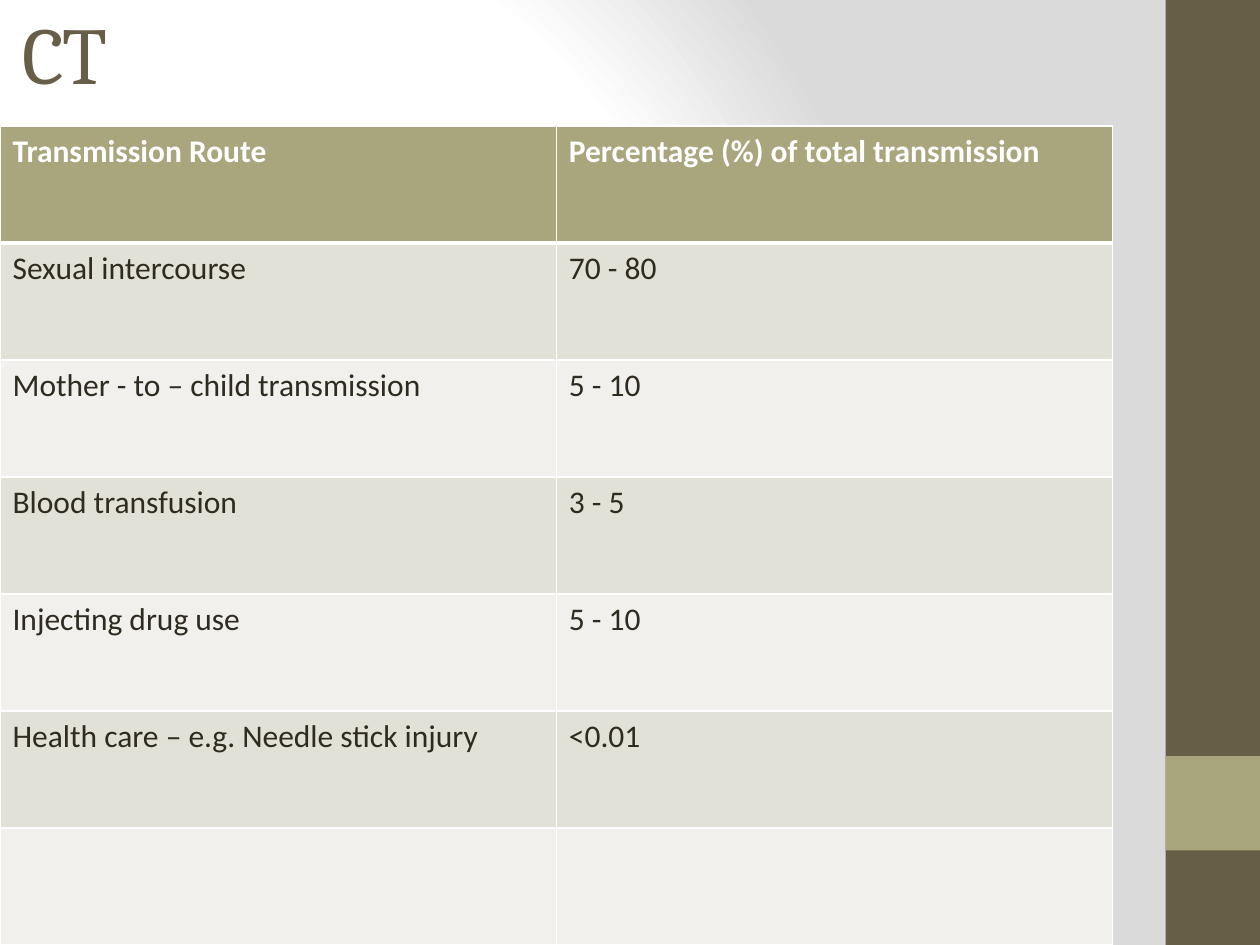
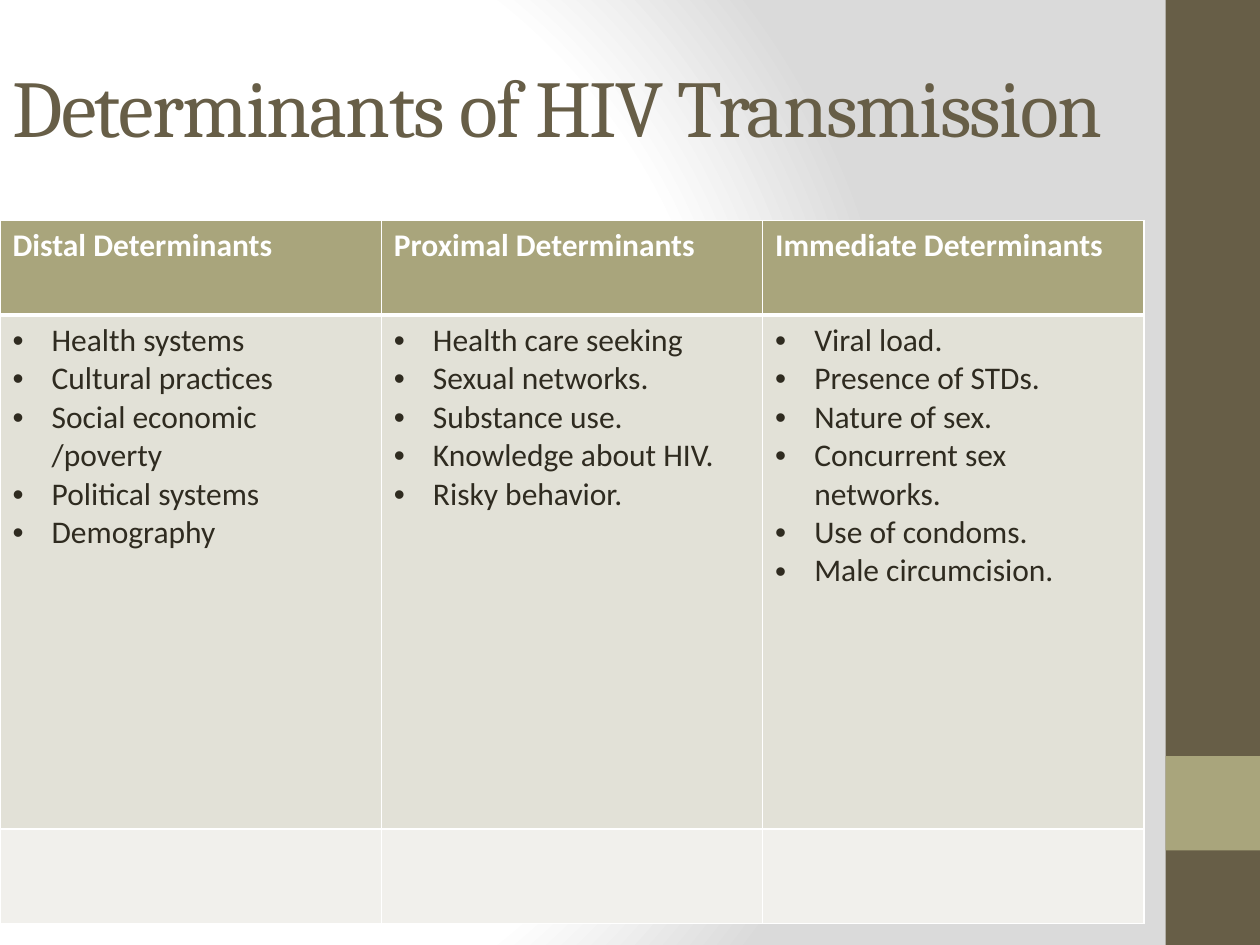
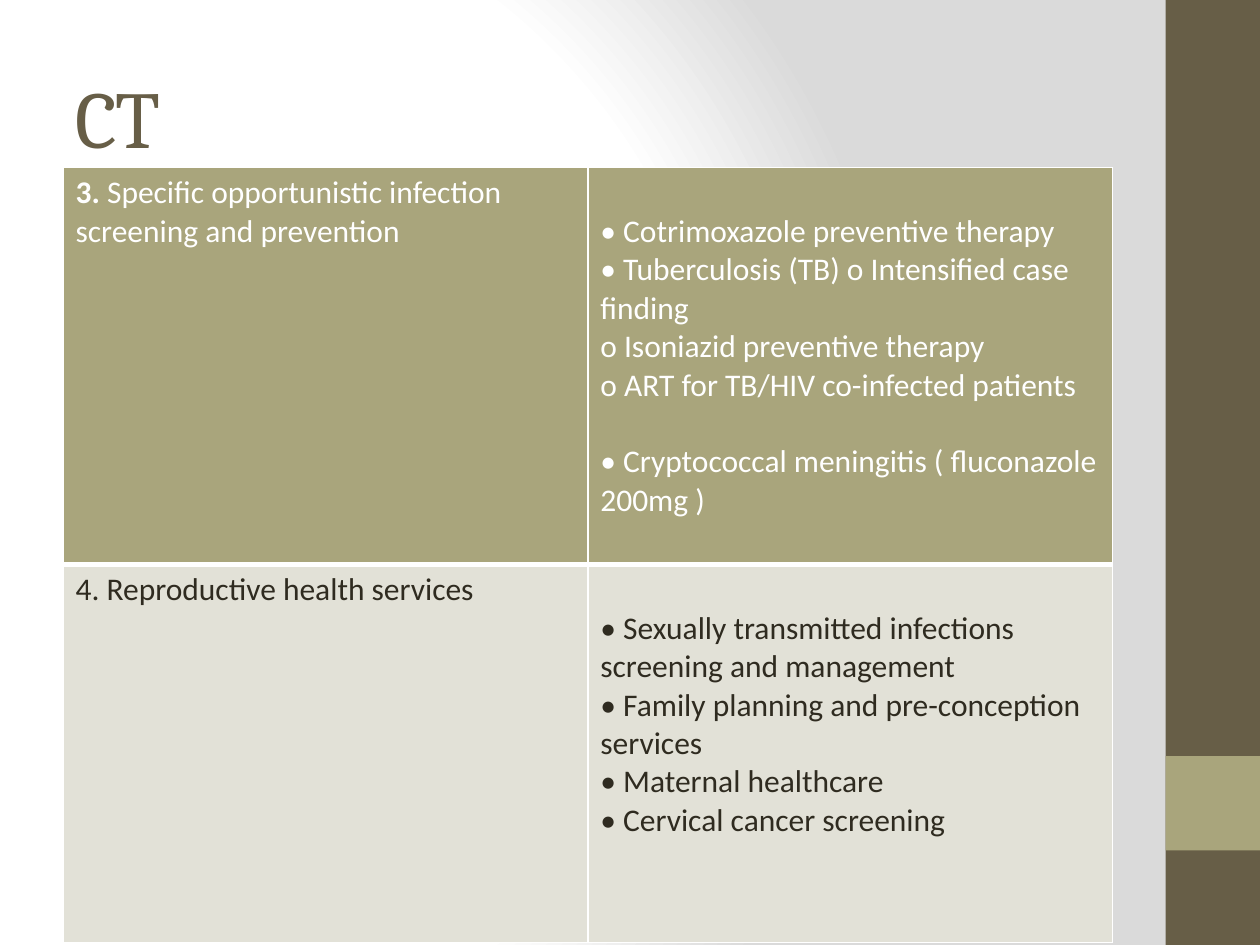
from dataclasses import dataclass

from lxml import etree
from pptx import Presentation
from pptx.dml.color import RGBColor
from pptx.enum.shapes import MSO_SHAPE
from pptx.enum.text import MSO_ANCHOR, MSO_AUTO_SIZE, PP_ALIGN
from pptx.oxml import parse_xml
from pptx.oxml.ns import nsdecls, qn
from pptx.util import Inches, Pt

WHITE = RGBColor(0xFF, 0xFF, 0xFF)
GREY = RGBColor(0xDA, 0xDA, 0xDA)
BROWN = RGBColor(0x67, 0x5E, 0x47)
OLIVE = RGBColor(0xA9, 0xA5, 0x7C)
INK = RGBColor(0x2F, 0x2B, 0x20)
ROW_FILLS = (RGBColor(0xF1, 0xF0, 0xEC), RGBColor(0xE2, 0xE1, 0xD7))
TITLE_FONT = "Cambria"
BODY_FONT = "Calibri"
BODY_SIZE = 18
LINE_HEIGHT = 0.305
BULLET_INDENT = 0.31
CELL_TOP = 0.05


@dataclass(frozen=True)
class Area:
    left: float
    top: float
    width: float
    height: float


@dataclass(frozen=True)
class Band:
    area: Area
    color: RGBColor


@dataclass(frozen=True)
class Line:
    text: str
    lead: str = ""
    bullet: bool = False
    space_before: float = 0


@dataclass(frozen=True)
class Cell:
    lines: tuple[Line, ...] = ()
    top: float = CELL_TOP


@dataclass(frozen=True)
class TablePage:
    title: str
    title_area: Area
    table_area: Area
    row_heights: tuple[float, ...]
    rows: tuple[tuple[Cell, ...], ...]
    bold_header: bool = True


BANDS = (
    Band(Area(9.25, 0, 0.75, 7.5), BROWN),
    Band(Area(9.25, 6, 0.75, 0.75), OLIVE),
)


def plain(*texts: str) -> tuple[Cell, ...]:
    return tuple(Cell((Line(text),)) for text in texts)


def bulleted(*texts: str) -> Cell:
    return Cell(tuple(Line(text, bullet=True) for text in texts))


def lowered(*lines: Line) -> Cell:
    return Cell(lines, top=CELL_TOP + LINE_HEIGHT)


PAGES = (
    TablePage(
        "CT",
        Area(0.08, 0, 8.75, 0.83),
        Area(0, 1, 8.83, 6.5),
        (6.5 / 7,) * 7,
        (
            plain("Transmission Route", "Percentage (%) of total transmission"),
            plain("Sexual intercourse", "70 - 80"),
            plain("Mother - to – child transmission", "5 - 10"),
            plain("Blood transfusion", "3 - 5"),
            plain("Injecting drug use", "5 - 10"),
            plain("Health care – e.g. Needle stick injury", "<0.01"),
            (Cell(),) * 2,
        ),
    ),
    TablePage(
        "Determinants of HIV Transmission",
        Area(0, 0, 9.08, 1.67),
        Area(0, 1.75, 9.08, 5.58),
        (0.75, 4.08, 0.75),
        (
            plain("Distal Determinants", "Proximal Determinants", "Immediate Determinants"),
            (
                bulleted(
                    "Health systems",
                    "Cultural practices",
                    "Social economic /poverty",
                    "Political systems",
                    "Demography",
                ),
                bulleted(
                    "Health care seeking",
                    "Sexual networks.",
                    "Substance use.",
                    "Knowledge about HIV.",
                    "Risky behavior.",
                ),
                bulleted(
                    "Viral load.",
                    "Presence of STDs.",
                    "Nature of sex.",
                    "Concurrent sex networks.",
                    "Use of condoms.",
                    "Male circumcision.",
                ),
            ),
            (Cell(),) * 3,
        ),
    ),
    TablePage(
        "CT",
        Area(0.5, 0.3, 8.33, 1.25),
        Area(0.5, 1.33, 8.33, 6.15),
        (3.15, 3),
        (
            (
                Cell((Line(" Specific opportunistic infection screening and prevention", lead="3."),)),
                lowered(
                    Line("• Cotrimoxazole preventive therapy"),
                    Line("• Tuberculosis (TB) o Intensified case finding"),
                    Line("o Isoniazid preventive therapy"),
                    Line("o ART for TB/HIV co-infected patients"),
                    Line("• Cryptococcal meningitis ( fluconazole 200mg )", space_before=LINE_HEIGHT),
                ),
            ),
            (
                Cell((Line("4. Reproductive health services"),)),
                lowered(
                    Line("• Sexually transmitted infections screening and management"),
                    Line("• Family planning and pre-conception services"),
                    Line("• Maternal healthcare"),
                    Line("• Cervical cancer screening"),
                ),
            ),
        ),
        bold_header=False,
    ),
)


def lengths(area: Area) -> tuple[Inches, ...]:
    return tuple(Inches(value) for value in (area.left, area.top, area.width, area.height))


def add_text(paragraph, text: str, *, color: RGBColor, font: str = BODY_FONT,
             size: float = BODY_SIZE, bold: bool = False, spacing: float = 0) -> None:
    span = paragraph.add_run()
    span.text = text
    span.font.name = font
    span.font.size = Pt(size)
    span.font.bold = bold
    span.font.color.rgb = color
    if spacing:
        span.font._element.set("spc", str(round(spacing * 100)))


def set_background(master) -> None:
    fill = master.background.fill
    fill.solid()
    stops = "".join(
        f'<a:gs pos="{position * 1000}"><a:srgbClr val="{color}"/></a:gs>'
        for position, color in ((0, WHITE), (75, WHITE), (100, GREY))
    )
    gradient = parse_xml(
        f'<a:gradFill {nsdecls("a")} rotWithShape="1"><a:gsLst>{stops}</a:gsLst>'
        '<a:path path="circle">'
        '<a:fillToRect l="20000" t="50000" r="100000" b="50000"/>'
        "</a:path></a:gradFill>"
    )
    solid = next(master._element.iter(qn("p:bgPr"))).find(qn("a:solidFill"))
    solid.getparent().replace(solid, gradient)


def add_master_bands(page, master) -> None:
    for index, band in enumerate(BANDS):
        box = page.shapes.add_shape(MSO_SHAPE.RECTANGLE, *lengths(band.area))
        box.shadow.inherit = False
        box.fill.solid()
        box.fill.fore_color.rgb = band.color
        box.line.fill.background()
        box._element.nvSpPr.cNvPr.set("id", str(100 + index))
        master.shapes._spTree.insert(2 + index, box._element)


def set_title(page, text: str, area: Area) -> None:
    title = page.shapes.title
    title.left, title.top, title.width, title.height = lengths(area)
    frame = title.text_frame
    frame.word_wrap = True
    frame.auto_size = MSO_AUTO_SIZE.NONE
    frame.vertical_anchor = MSO_ANCHOR.MIDDLE
    paragraph = frame.paragraphs[0]
    paragraph.alignment = PP_ALIGN.LEFT
    add_text(paragraph, text, color=BROWN, font=TITLE_FONT, size=46, spacing=-1)


def set_borders(cell, widths: dict[str, float]) -> None:
    properties = cell._tc.get_or_add_tcPr()
    for index, (side, width) in enumerate(widths.items()):
        border = etree.Element(qn(f"a:ln{side}"), w=str(Pt(width)))
        fill = etree.SubElement(border, qn("a:solidFill"))
        etree.SubElement(fill, qn("a:srgbClr"), val=str(WHITE))
        properties.insert(index, border)


def add_bullet(paragraph) -> None:
    properties = paragraph._p.get_or_add_pPr()
    indent = Inches(BULLET_INDENT)
    properties.set("marL", str(indent))
    properties.set("indent", str(-indent))
    etree.SubElement(properties, qn("a:buFont"), typeface="Arial")
    etree.SubElement(properties, qn("a:buChar"), char="•")


def fill_cell(cell, content: Cell, row: int, bold: bool) -> None:
    cell.fill.solid()
    cell.fill.fore_color.rgb = ROW_FILLS[row % 2] if row else OLIVE
    set_borders(cell, {"L": 1, "R": 1, "T": 3 if row == 1 else 1, "B": 1 if row else 3})
    cell.margin_top = Inches(content.top)
    color = INK if row else WHITE
    frame = cell.text_frame
    for index, line in enumerate(content.lines):
        paragraph = frame.add_paragraph() if index else frame.paragraphs[0]
        if line.space_before:
            paragraph.space_before = Inches(line.space_before)
        if line.bullet:
            add_bullet(paragraph)
        if line.lead:
            add_text(paragraph, line.lead, color=color, bold=True)
        add_text(paragraph, line.text, color=color, bold=bold)


def add_page_table(page, content: TablePage) -> None:
    column_count = len(content.rows[0])
    table = page.shapes.add_table(
        len(content.rows), column_count, *lengths(content.table_area)
    ).table
    for column in table.columns:
        column.width = Inches(content.table_area.width / column_count)
    for row, height in zip(table.rows, content.row_heights):
        row.height = Inches(height)
    for row_index, cells in enumerate(content.rows):
        bold = content.bold_header and row_index == 0
        for column_index, cell in enumerate(cells):
            fill_cell(table.cell(row_index, column_index), cell, row_index, bold)


def main() -> None:
    deck = Presentation()
    deck.slide_width, deck.slide_height = Inches(10), Inches(7.5)
    layout = deck.slide_layouts.get_by_name("Title Only")
    set_background(deck.slide_master)
    for index, content in enumerate(PAGES):
        page = deck.slides.add_slide(layout)
        if index == 0:
            add_master_bands(page, deck.slide_master)
        set_title(page, content.title, content.title_area)
        add_page_table(page, content)
    deck.save("out.pptx")


if __name__ == "__main__":
    main()
